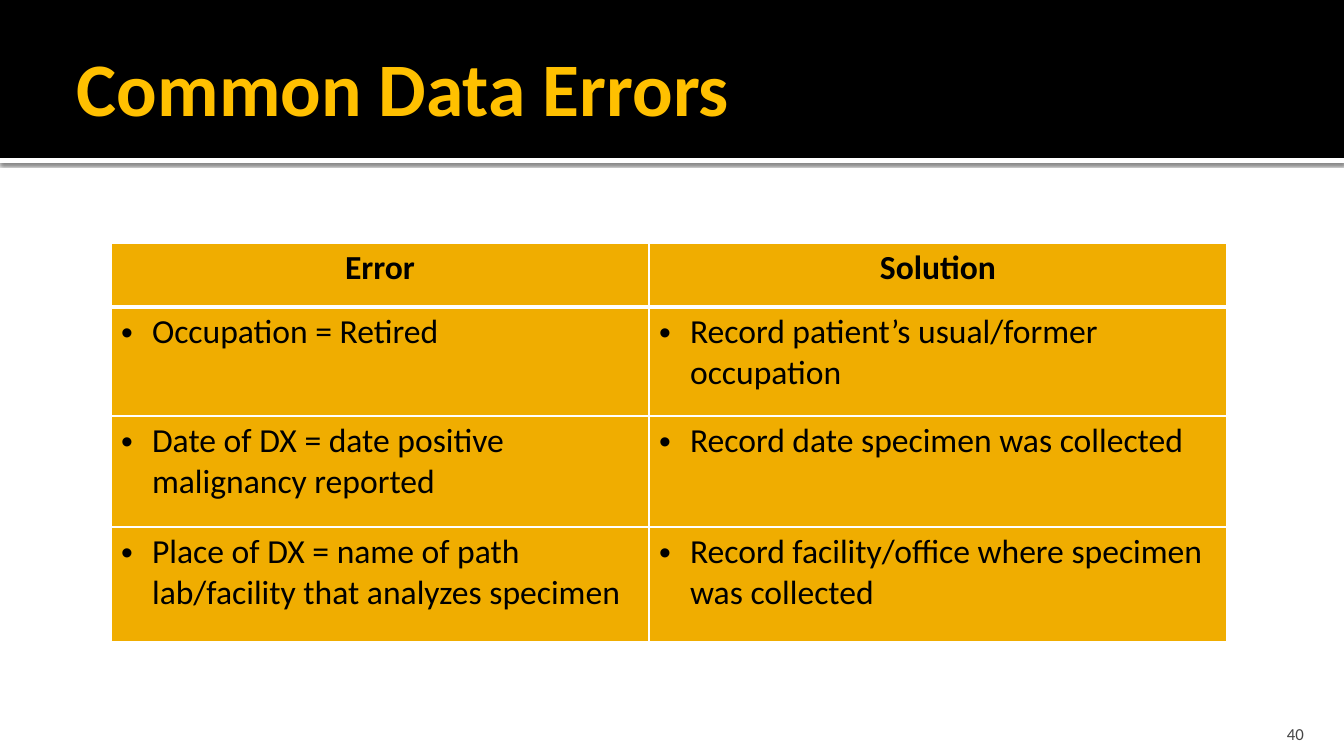
from lxml.etree import SubElement
from pptx import Presentation
from pptx.dml.color import RGBColor
from pptx.enum.shapes import MSO_SHAPE
from pptx.enum.text import MSO_ANCHOR, MSO_AUTO_SIZE, PP_ALIGN
from pptx.oxml import parse_xml
from pptx.oxml.ns import nsdecls, qn
from pptx.util import Pt

EMU_PER_PX = 914400 / 100.8
FONT = "Calibri"
ROWS = [
    ("Error", "Solution"),
    ("Occupation = Retired", "Record patient’s usual/former occupation"),
    ("Date of DX = date positive malignancy reported", "Record date specimen was collected"),
    ("Place of DX = name of path lab/facility that analyzes specimen",
     "Record facility/office where specimen was collected"),
]
COLUMN_WIDTHS = (538, 578)
ROW_HEIGHTS = (64, 109, 111, 115)


def px(length):
    return round(length * EMU_PER_PX)


def color(hex_code):
    return RGBColor.from_string(hex_code)


def place(part, box):
    part.left, part.top, part.width, part.height = map(px, box)


def write(paragraph, text, size, hex_code, bold=False, align=PP_ALIGN.LEFT):
    paragraph.alignment = align
    run = paragraph.add_run()
    run.text = text
    run.font.name = FONT
    run.font.size = Pt(size)
    run.font.bold = bold
    run.font.color.rgb = color(hex_code)


def set_margins(frame, left, top, right, bottom):
    frame.margin_left, frame.margin_top = px(left), px(top)
    frame.margin_right, frame.margin_bottom = px(right), px(bottom)


def add_band(slide, box, hex_code):
    band = slide.shapes.add_shape(MSO_SHAPE.RECTANGLE, *map(px, box))
    band.fill.solid()
    band.fill.fore_color.rgb = color(hex_code)
    band.line.fill.background()
    band.shadow.inherit = False
    slide.shapes.title.element.addprevious(band.element)
    return band


def add_shadow(band):
    effects = band.element.spPr.find(qn("a:effectLst"))
    effects.append(parse_xml(
        f'<a:outerShdw {nsdecls("a")} blurRad="{Pt(2.5)}" dist="{Pt(0.8)}" dir="5400000" '
        'algn="tl" rotWithShape="0"><a:srgbClr val="000000"><a:alpha val="60000"/>'
        '</a:srgbClr></a:outerShdw>'))


def build_header(slide, box):
    left, top, width, height = box
    add_shadow(add_band(slide, (left, top + height, width, 5), "FFFFFF"))
    add_band(slide, box, "000000")
    title = slide.shapes.title
    place(title, (left + 67, top + 17, width - 134, height - 20))
    frame = title.text_frame
    frame.auto_size = MSO_AUTO_SIZE.NONE
    frame.word_wrap = True
    frame.vertical_anchor = MSO_ANCHOR.MIDDLE
    set_margins(frame, 10, 5, 5, 5)
    write(frame.paragraphs[0], "Common Data Errors", 54, "FFC000", bold=True)


def set_borders(cell, top, bottom):
    properties = cell._tc.get_or_add_tcPr()
    for index, (side, points) in enumerate((("L", 1), ("R", 1), ("T", top), ("B", bottom))):
        properties.insert(index, parse_xml(
            f'<a:ln{side} {nsdecls("a")} w="{Pt(points)}"><a:solidFill>'
            f'<a:srgbClr val="FFFFFF"/></a:solidFill></a:ln{side}>'))


def add_bullet(paragraph):
    properties = paragraph._p.get_or_add_pPr()
    properties.set("marL", str(px(31)))
    properties.set("indent", str(px(-31)))
    SubElement(properties, qn("a:buFont")).set("typeface", "Arial")
    SubElement(properties, qn("a:buChar")).set("char", "•")


def build_error_table(slide, box):
    table = slide.shapes.add_table(len(ROWS), len(COLUMN_WIDTHS), *map(px, box)).table
    for column, width in zip(table.columns, COLUMN_WIDTHS):
        column.width = px(width)
    for row, height in zip(table.rows, ROW_HEIGHTS):
        row.height = px(height)
    for row_index, texts in enumerate(ROWS):
        heading = row_index == 0
        for column_index, text in enumerate(texts):
            cell = table.cell(row_index, column_index)
            cell.fill.solid()
            cell.fill.fore_color.rgb = color("F0AD00")
            set_borders(cell, 3 if row_index == 1 else 1, 3 if heading else 1)
            paragraph = cell.text_frame.paragraphs[0]
            write(paragraph, text, 24, "000000", heading,
                  PP_ALIGN.CENTER if heading else PP_ALIGN.LEFT)
            if not heading:
                add_bullet(paragraph)


def build_page_number(slide, box):
    frame = slide.shapes.add_textbox(*map(px, box)).text_frame
    frame.word_wrap = True
    frame.vertical_anchor = MSO_ANCHOR.BOTTOM
    set_margins(frame, 10, 5, 10, 0)
    write(frame.paragraphs[0], "40", 12, "454545", align=PP_ALIGN.RIGHT)


def main():
    deck = Presentation()
    deck.slide_width, deck.slide_height = px(1344), px(756)
    slide = deck.slides.add_slide(deck.slide_layouts.get_by_name("Title Only"))
    build_header(slide, (0, 0, 1344, 158))
    build_error_table(slide, (111, 243, sum(COLUMN_WIDTHS), sum(ROW_HEIGHTS)))
    build_page_number(slide, (1206, 714, 108, 30))
    deck.save("out.pptx")


if __name__ == "__main__":
    main()
